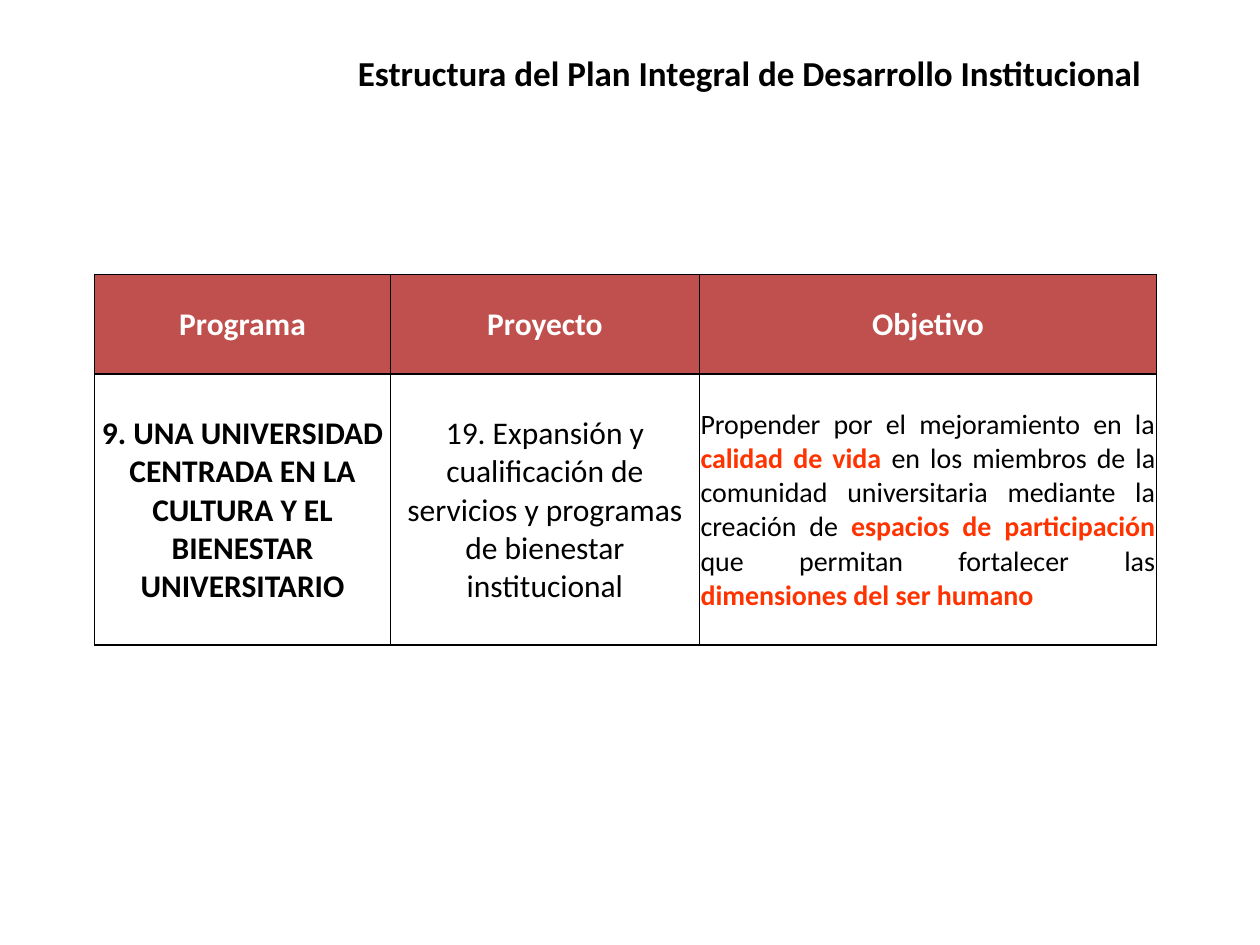
from lxml import etree
from pptx import Presentation
from pptx.dml.color import RGBColor
from pptx.enum.text import MSO_ANCHOR, PP_ALIGN
from pptx.oxml import parse_xml
from pptx.oxml.ns import nsdecls
from pptx.util import Inches, Pt

CENTER, JUSTIFY = PP_ALIGN.CENTER, PP_ALIGN.JUSTIFY
MIDDLE = MSO_ANCHOR.MIDDLE
FONT = "Calibri"
HEX = {"black": "000000", "white": "FFFFFF", "head": "C0504D", "key": "FF3300"}

TITLE = "Estructura del Plan Integral de Desarrollo Institucional"
# Each run is (text, colour, bold); each cell is (runs, size, alignment).
HEADS = ["Programa", "Proyecto", "Objetivo"]
GOAL = [
    ("Propender por el mejoramiento en la ", "black", False),
    ("calidad de vida ", "key", True),
    ("en los miembros de la comunidad universitaria mediante la creación de ",
     "black", False),
    ("espacios de participación ", "key", True),
    ("que permitan fortalecer las ", "black", False),
    ("dimensiones del ser humano", "key", True),
]
BODY = [
    ([("9. UNA UNIVERSIDAD CENTRADA EN LA CULTURA Y EL BIENESTAR UNIVERSITARIO",
       "black", True)], 18, CENTER),
    ([("19. Expansión y cualificación de servicios y programas de bienestar "
       "institucional", "black", False)], 18, CENTER),
    (GOAL, 16, JUSTIFY),
]
ROWS = [[([(head, "white", True)], 18, CENTER) for head in HEADS], BODY]
FILLS = ["head", "white"]
COLS = [2.35, 2.45, 3.63]
TALL = [0.79, 2.15]


def color(name):
    return RGBColor.from_string(HEX[name])


def write(frame, runs, size, align):
    para = frame.paragraphs[0]
    para.alignment = align
    for text, tint, bold in runs:
        run = para.add_run()
        run.text = text
        font = run.font
        font.name, font.size, font.bold = FONT, Pt(size), bold
        font.color.rgb = color(tint)


def border(cell):
    """Draw a thin black line on all four sides."""
    props = cell._tc.get_or_add_tcPr()
    for spot, side in enumerate(("lnL", "lnR", "lnT", "lnB")):
        line = parse_xml(f'<a:{side} {nsdecls("a")} w="{Pt(1)}"/>')
        fill = etree.SubElement(line, line.tag.replace(side, "solidFill"))
        tint = etree.SubElement(fill, line.tag.replace(side, "srgbClr"))
        tint.set("val", HEX["black"])
        props.insert(spot, line)


def add_title(slide):
    box = slide.shapes.add_textbox(
        Inches(2.17), Inches(0.36), Inches(7.56), Inches(0.58))
    box.text_frame.word_wrap = True
    write(box.text_frame, [(TITLE, "black", True)], 20, CENTER)


def add_plan(slide):
    table = slide.shapes.add_table(
        len(ROWS), len(COLS), Inches(0.75), Inches(2.18),
        Inches(sum(COLS)), Inches(sum(TALL))).table
    for col, wide in zip(table.columns, COLS):
        col.width = Inches(wide)
    for row, tall, cells, fill in zip(table.rows, TALL, ROWS, FILLS):
        row.height = Inches(tall)
        for cell, (runs, size, align) in zip(row.cells, cells):
            cell.margin_left = cell.margin_right = cell.margin_top = Inches(0.01)
            cell.margin_bottom = 0
            cell.vertical_anchor = MIDDLE
            cell.fill.solid()
            cell.fill.fore_color.rgb = color(fill)
            border(cell)
            write(cell.text_frame, runs, size, align)


def main():
    deck = Presentation()
    deck.slide_width, deck.slide_height = Inches(10), Inches(7.5)
    slide = deck.slides.add_slide(deck.slide_layouts[6])
    add_plan(slide)
    add_title(slide)
    deck.save("out.pptx")


if __name__ == "__main__":
    main()
